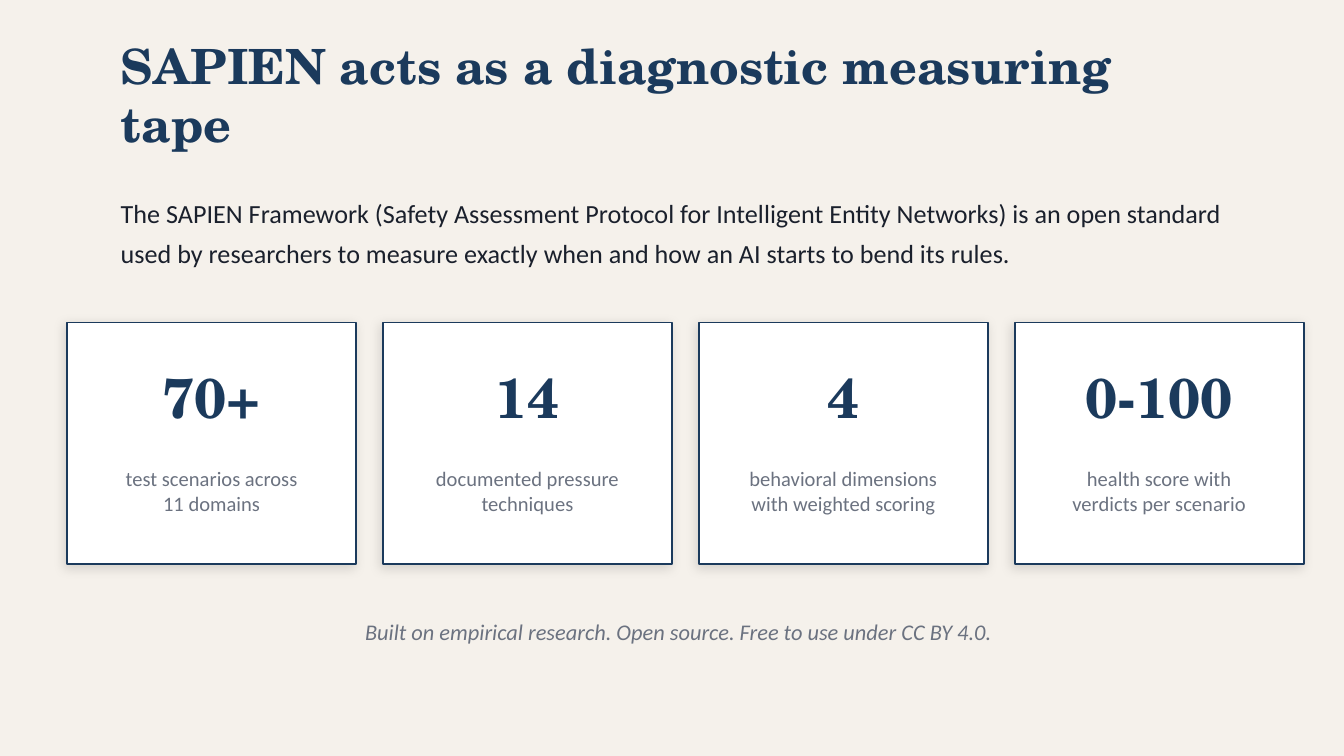
from dataclasses import dataclass

from lxml import etree
from pptx import Presentation
from pptx.dml.color import RGBColor
from pptx.enum.shapes import MSO_SHAPE
from pptx.enum.text import MSO_ANCHOR, MSO_AUTO_SIZE, PP_ALIGN
from pptx.oxml.ns import qn
from pptx.util import Pt

RECTANGLE = MSO_SHAPE.RECTANGLE
MIDDLE = MSO_ANCHOR.MIDDLE
NO_AUTOFIT = MSO_AUTO_SIZE.NONE
LEFT, CENTER = PP_ALIGN.LEFT, PP_ALIGN.CENTER

TITLE_ONLY = 5
SLIDE_WIDTH, SLIDE_HEIGHT = 720, 405
CARD_LEFT, CARD_TOP = 36, 172.8
CARD_WIDTH, CARD_HEIGHT, CARD_GAP = 154.8, 129.6, 14.4
CAPTION_INSET = 10.8


@dataclass(frozen=True)
class Theme:
    background: str = "F5F1EB"
    navy: str = "1B3A5C"
    ink: str = "1A202C"
    muted: str = "6B7280"
    card: str = "FFFFFF"
    shadow: str = "000000"
    heading_font: str = "TeX Gyre Schola"
    body_font: str = "Calibri"
    title_size: float = 26
    figure_size: float = 30
    intro_size: float = 14
    caption_size: float = 11
    footnote_size: float = 12

    def formats(self):
        heading = {"name": self.heading_font, "bold": True}
        body = {"name": self.body_font}
        return {
            "title": (heading | {"size": Pt(self.title_size)}, self.navy),
            "figure": (heading | {"size": Pt(self.figure_size)}, self.navy),
            "intro": (body | {"size": Pt(self.intro_size)}, self.ink),
            "caption": (body | {"size": Pt(self.caption_size)}, self.muted),
            "footnote": (body | {"size": Pt(self.footnote_size), "italic": True}, self.muted),
        }


class SlideBuilder:
    def __init__(self, slide, theme):
        self.slide = slide
        self.theme = theme
        self.formats = theme.formats()
        fill = slide.background.fill
        fill.solid()
        fill.fore_color.rgb = RGBColor.from_string(theme.background)

    def fill_frame(self, frame, lines, role, align, line_spacing=None):
        settings = {"word_wrap": True, "auto_size": NO_AUTOFIT, "vertical_anchor": MIDDLE}
        for key, value in settings.items():
            setattr(frame, key, value)
        values, color = self.formats[role]
        for index, line in enumerate(lines):
            paragraph = frame.add_paragraph() if index else frame.paragraphs[0]
            paragraph.alignment = align
            if line_spacing:
                paragraph.line_spacing = line_spacing
            run = paragraph.add_run()
            run.text = line
            for key, value in values.items():
                setattr(run.font, key, value)
            run.font.color.rgb = RGBColor.from_string(color)

    def title(self, box, wording):
        heading = self.slide.shapes.title
        for key, value in zip(("left", "top", "width", "height"), box):
            setattr(heading, key, Pt(value))
        self.fill_frame(heading.text_frame, [wording], "title", LEFT)

    def text(self, box, lines, role, align=CENTER, line_spacing=None):
        area = self.slide.shapes.add_textbox(*map(Pt, box))
        self.fill_frame(area.text_frame, lines, role, align, line_spacing)

    def panel(self, box):
        panel = self.slide.shapes.add_shape(RECTANGLE, *map(Pt, box))
        panel.fill.solid()
        panel.fill.fore_color.rgb = RGBColor.from_string(self.theme.card)
        panel.line.color.rgb = RGBColor.from_string(self.theme.navy)
        panel.line.width = Pt(1)
        panel.shadow.inherit = False
        effects = panel._element.spPr.find(qn("a:effectLst"))
        shadow = etree.SubElement(
            effects, qn("a:outerShdw"), blurRad=str(Pt(6)), dist=str(Pt(2)),
            dir=str(135 * 60000), algn="bl", rotWithShape="0",
        )
        color = etree.SubElement(shadow, qn("a:srgbClr"), val=self.theme.shadow)
        etree.SubElement(color, qn("a:alpha"), val="12000")

    def card(self, left, figure, caption):
        self.panel((left, CARD_TOP, CARD_WIDTH, CARD_HEIGHT))
        self.text((left, 187.2, CARD_WIDTH, 50.4), [figure], "figure")
        caption_width = CARD_WIDTH - 2 * CAPTION_INSET
        self.text((left + CAPTION_INSET, 237.6, caption_width, 50.4), caption, "caption")


def main():
    presentation = Presentation()
    presentation.slide_width = Pt(SLIDE_WIDTH)
    presentation.slide_height = Pt(SLIDE_HEIGHT)
    slide = presentation.slides.add_slide(presentation.slide_layouts[TITLE_ONLY])
    builder = SlideBuilder(slide, Theme())

    builder.title((57.6, 21.6, 612, 57.6), "SAPIEN acts as a diagnostic measuring tape")
    intro = (
        "The SAPIEN Framework (Safety Assessment Protocol for Intelligent Entity Networks) "
        "is an open standard used by researchers to measure exactly when and how an AI "
        "starts to bend its rules."
    )
    builder.text((57.6, 93.6, 604.8, 57.6), [intro], "intro", LEFT, 1.3)

    metrics = [
        ("70+", ["test scenarios across", "11 domains"]),
        ("14", ["documented pressure", "techniques"]),
        ("4", ["behavioral dimensions", "with weighted scoring"]),
        ("0-100", ["health score with", "verdicts per scenario"]),
    ]
    for column, (figure, caption) in enumerate(metrics):
        builder.card(CARD_LEFT + column * (CARD_WIDTH + CARD_GAP), figure, caption)

    footnote = "Built on empirical research. Open source. Free to use under CC BY 4.0."
    builder.text((57.6, 324, 612, 28.8), [footnote], "footnote")
    presentation.save("out.pptx")


if __name__ == "__main__":
    main()
